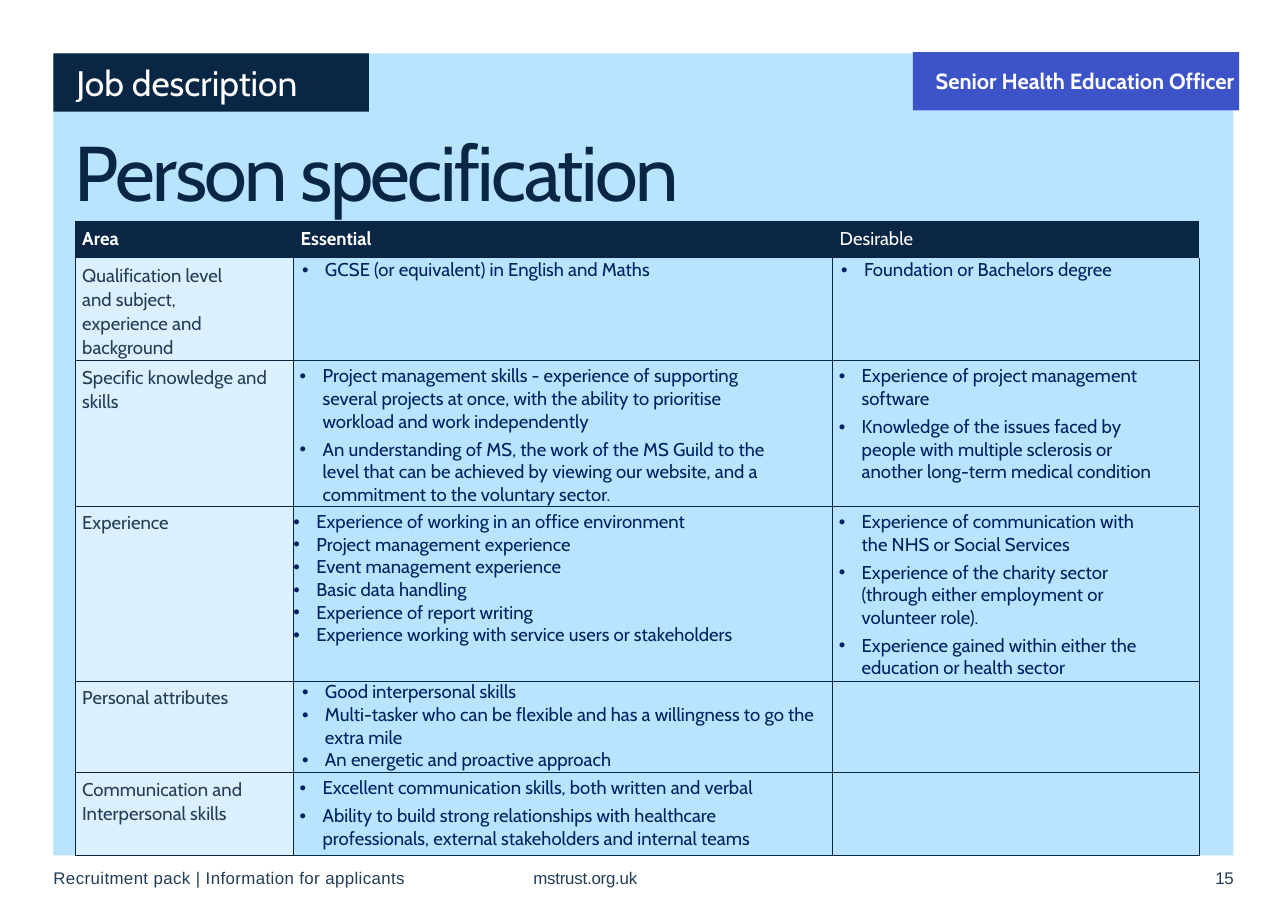
from dataclasses import dataclass

from lxml import etree
from pptx import Presentation
from pptx.dml.color import RGBColor
from pptx.enum import shapes, text
from pptx.oxml import ns
from pptx.util import Cm, Pt


@dataclass(frozen=True)
class Theme:
    """Colours, fonts and type sizes of the pack."""
    navy: str = "0A2645"
    sky: str = "B8E4FF"
    pale: str = "DBF1FF"
    indigo: str = "3D54C9"
    slate: str = "233C57"
    ink: str = "002060"
    white: str = "FFFFFF"
    body: str = "Cabin"
    plain: str = "Arial"
    title_size: float = 46
    section_size: float = 21
    role_size: float = 13
    table_size: float = 11
    footer_size: float = 10
    rule: float = 0.25


THEME = Theme()
NO_STYLE = "{2D5ABB26-0587-4C30-8999-92F81FD0307C}"
HEADINGS = [("Area", True), ("Essential", True), ("Desirable", False)]
COLUMNS = [4.57, 11.28, 7.67]
HEADER_HEIGHT = 0.79

INSET = dict(insets=(0.18, 0, 0.18, 0), indent=0.48)
FLUSH = dict(insets=(0, 0.1, 0, 0), indent=0.48)
SPACED = dict(insets=(0, 0.1, 0, 0), indent=0.61, before=3.1)
WIDE = dict(SPACED, right=1.02)
NARROW = dict(SPACED, right=0.81)

CRITERIA = [
    (2.13, "Qualification level and subject, experience and background", 1.02,
     (INSET, ["GCSE (or equivalent) in English and Maths"]),
     (INSET, ["Foundation or Bachelors degree"])),
    (3.05, "Specific knowledge and skills", 0,
     (WIDE, ["Project management skills - experience of supporting several projects at once, "
             "with the ability to prioritise workload and work independently",
             "An understanding of MS, the work of the MS Guild to the level that can be achieved "
             "by viewing our website, and a commitment to the voluntary sector."]),
     (NARROW, ["Experience of project management software",
               "Knowledge of the issues faced by people with multiple sclerosis or "
               "another long-term medical condition"])),
    (3.66, "Experience", 0,
     (FLUSH, ["Experience of working in an office environment",
              "Project management experience",
              "Event management experience",
              "Basic data handling",
              "Experience of report writing",
              "Experience working with service users or stakeholders"]),
     (NARROW, ["Experience of communication with the NHS or Social Services",
               "Experience of the charity sector (through either employment or volunteer role).",
               "Experience gained within either the education or health sector"])),
    (1.91, "Personal attributes", 0,
     (INSET, ["Good interpersonal skills",
              "Multi-tasker who can be flexible and has a willingness to go the extra mile",
              "An energetic and proactive approach"]),
     (INSET, [])),
    (1.75, "Communication and Interpersonal skills", 0,
     (WIDE, ["Excellent communication skills, both written and verbal",
             "Ability to build strong relationships with healthcare professionals, "
             "external stakeholders and internal teams"]),
     (NARROW, [])),
]


def write(frame, lines, *, size, color, font=THEME.body, bold=False, indent=0, right=0,
          before=0, spacing=None, tracking=0, bullet=False):
    """Write each line as a paragraph in the given format."""
    for index, line in enumerate(lines):
        paragraph = frame.add_paragraph() if index else frame.paragraphs[0]
        paragraph.alignment = text.PP_ALIGN.LEFT
        if index:
            paragraph.space_before = Pt(before)
        if spacing:
            paragraph.line_spacing = spacing
        properties = paragraph._p.get_or_add_pPr()
        properties.set("marL", str(Cm(indent)))
        properties.set("marR", str(Cm(right)))
        properties.set("indent", str(Cm(-0.48 if bullet else 0)))
        if bullet:
            etree.SubElement(properties, ns.qn("a:buFont")).set("typeface", THEME.plain)
            etree.SubElement(properties, ns.qn("a:buChar")).set("char", "•")
        run = paragraph.add_run()
        run.text = line
        run.font.size = Pt(size)
        run.font.name = font
        run.font.bold = bold
        run.font.color.rgb = RGBColor.from_string(color)
        if tracking:
            run._r.get_or_add_rPr().set("spc", str(round(tracking * 100)))


def set_insets(holder, insets):
    """Set left, top, right and bottom margins of a frame or cell."""
    (holder.margin_left, holder.margin_top,
     holder.margin_right, holder.margin_bottom) = map(Cm, insets)


def add_panel(slide, box, color):
    """Add a plain filled rectangle."""
    panel = slide.shapes.add_shape(shapes.MSO_SHAPE.RECTANGLE, *map(Cm, box))
    panel.shadow.inherit = False
    panel.fill.solid()
    panel.fill.fore_color.rgb = RGBColor.from_string(color)
    panel.line.fill.background()
    return panel


def add_tag(slide, box, label, color, **style):
    """Add a coloured label with white text."""
    frame = add_panel(slide, box, color).text_frame
    frame.word_wrap = True
    frame.vertical_anchor = text.MSO_ANCHOR.MIDDLE
    set_insets(frame, (0, 0, 0, 0))
    write(frame, [label], color=THEME.white, indent=0.48, **style)


def add_label(slide, box, label, **style):
    """Add a text box without margins."""
    frame = slide.shapes.add_textbox(*map(Cm, box)).text_frame
    frame.word_wrap = True
    set_insets(frame, (0, 0, 0, 0))
    write(frame, [label], **style)


def paint_cell(cell, color, sides, insets):
    """Set a cell's margins, ruled sides and fill."""
    set_insets(cell, insets)
    properties = cell._tc.get_or_add_tcPr()
    for side in sides:
        rule = etree.SubElement(properties, ns.qn(f"a:ln{side}"), w=str(Pt(THEME.rule)))
        fill = etree.SubElement(rule, ns.qn("a:solidFill"))
        etree.SubElement(fill, ns.qn("a:srgbClr"), val=THEME.navy)
    cell.fill.solid()
    cell.fill.fore_color.rgb = RGBColor.from_string(color)


def add_criteria(slide, left, top):
    """Add the table of essential and desirable criteria."""
    heights = [HEADER_HEIGHT] + [criterion[0] for criterion in CRITERIA]
    frame = slide.shapes.add_table(len(heights), len(COLUMNS), Cm(left), Cm(top),
                                   Cm(sum(COLUMNS)), Cm(sum(heights)))
    table = frame.table
    table.first_row = table.horz_banding = False
    table._tbl.tblPr.find(ns.qn("a:tableStyleId")).text = NO_STYLE
    for column, width in zip(table.columns, COLUMNS):
        column.width = Cm(width)
    for row, height in zip(table.rows, heights):
        row.height = Cm(height)
    for cell, (heading, bold) in zip(table.rows[0].cells, HEADINGS):
        paint_cell(cell, THEME.navy, "", (0, 0.15, 0, 0))
        write(cell.text_frame, [heading], size=THEME.table_size, color=THEME.white,
              bold=bold, indent=0.15)
    for index, (_, area, right, *requirements) in enumerate(CRITERIA, 1):
        sides = "LRB" if index == 1 else "LRTB"
        area_cell, *requirement_cells = table.rows[index].cells
        paint_cell(area_cell, THEME.pale, sides, (0, 0.1, 0, 0))
        write(area_cell.text_frame, [area], size=THEME.table_size, color=THEME.slate,
              indent=0.15, right=right, spacing=1.06)
        for cell, (style, lines) in zip(requirement_cells, requirements):
            layout = dict(style)
            paint_cell(cell, THEME.sky, sides, layout.pop("insets"))
            write(cell.text_frame, lines, size=THEME.table_size, color=THEME.ink,
                  bullet=True, **layout)


def add_footer(slide, top):
    """Add the pack name, web address and page number."""
    for left, width, label, tracking in [
            (11.13, 2.6, "mstrust.org.uk", -0.1),
            (1.09, 8, "Recruitment pack | Information for applicants", 0.25),
            (25.4, 0.55, "15", -0.2)]:
        add_label(slide, (left, top, width, 0.53), label, size=THEME.footer_size,
                  color=THEME.slate, font=THEME.plain, indent=0.03, tracking=tracking)


def add_specification(slide, left, top):
    """Add the person specification page from its top left corner."""
    add_panel(slide, (left, top, 24.69, 16.79), THEME.sky)
    add_tag(slide, (left, top, 6.6, 1.22), "Job description", THEME.navy,
            size=THEME.section_size)
    add_label(slide, (left + 0.45, top + 1.7, 23.8, 1.78), "Person specification",
              size=THEME.title_size, color=THEME.navy, spacing=0.9, tracking=-1.5)
    add_footer(slide, top + 17.04)
    add_criteria(slide, left + 0.45, top + 3.5)
    add_tag(slide, (left + 17.98, top - 0.03, 6.83, 1.22), "Senior Health Education Officer",
            THEME.indigo, size=THEME.role_size, bold=True)


def main():
    """Build and save the slide."""
    deck = Presentation()
    deck.slide_width, deck.slide_height = Cm(26.95), Cm(19.05)
    add_specification(deck.slides.add_slide(deck.slide_layouts[6]), 1.12, 1.12)
    deck.save("out.pptx")


if __name__ == "__main__":
    main()
